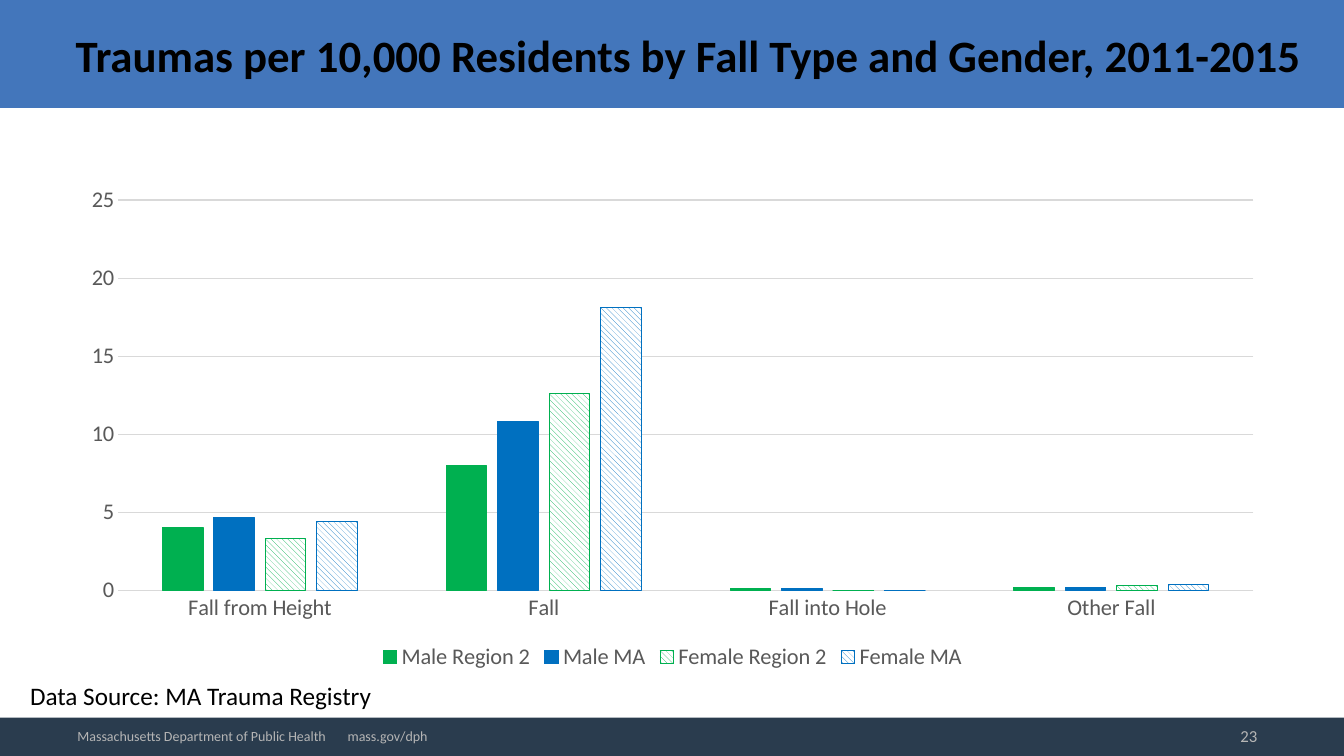
import pptx
import pptx.chart.data
import pptx.dml.color
import pptx.enum.chart
import pptx.enum.dml
import pptx.enum.shapes
import pptx.enum.text
import pptx.util

Inches = pptx.util.Inches
Points = pptx.util.Pt
Anchor = pptx.enum.text.MSO_ANCHOR
Align = pptx.enum.text.PP_ALIGN

COLORS = {
    "banner": "4376BB", "footer": "2A3C4E", "text": "000000",
    "footer_text": "B5B5B5", "axis_text": "595959", "grid": "D9D9D9",
    "region": "00B050", "state": "0070C0", "white": "FFFFFF",
}
CATEGORIES = ["Fall from Height", "Fall", "Fall into Hole", "Other Fall"]
SERIES = [
    ("Male Region 2", (4, 8, 0.1, 0.2), "region", False),
    ("Male MA", (4.7, 10.8, 0.1, 0.2), "state", False),
    ("Female Region 2", (3.3, 12.6, 0, 0.3), "region", True),
    ("Female MA", (4.4, 18.1, 0, 0.4), "state", True),
]


class SlideBuilder:
    """Holds the style and the current page, and adds each kind of element."""

    def __init__(self, page, font="Calibri"):
        self.page = page
        self.font = font

    def color(self, name):
        return pptx.dml.color.RGBColor.from_string(COLORS[name])

    def style_font(self, font, size, color, bold=False):
        font.name = self.font
        font.size = Points(size)
        font.bold = bold
        font.color.rgb = self.color(color)

    def style_line(self, line, color):
        line.color.rgb = self.color(color)
        line.width = Points(0.75)

    def band(self, top, height, color):
        box = self.page.shapes.add_shape(
            pptx.enum.shapes.MSO_SHAPE.RECTANGLE,
            0, Inches(top), Inches(13.33), Inches(height))
        box.shadow.inherit = False
        box.fill.solid()
        box.fill.fore_color.rgb = self.color(color)
        box.line.fill.background()

    def fill_text(self, box, text, size, color, anchor, align=Align.LEFT, bold=False):
        frame = box.text_frame
        frame.text = text
        frame.word_wrap = True
        frame.auto_size = pptx.enum.text.MSO_AUTO_SIZE.NONE
        frame.vertical_anchor = anchor
        for para in frame.paragraphs:
            para.alignment = align
            for span in para.runs:
                self.style_font(span.font, size, color, bold)

    def title(self, text, left, top, width, height):
        box = self.page.shapes.title
        box.left, box.top = Inches(left), Inches(top)
        box.width, box.height = Inches(width), Inches(height)
        self.page.shapes._spTree.append(box._element)
        self.fill_text(box, text, 32, "text", Anchor.MIDDLE, bold=True)

    def text(self, text, left, top, width, height, size, color,
             anchor=Anchor.MIDDLE, align=Align.LEFT):
        box = self.page.shapes.add_textbox(
            Inches(left), Inches(top), Inches(width), Inches(height))
        self.fill_text(box, text, size, color, anchor, align)

    def column_chart(self, categories, series_rows, left, top, width, height):
        data = pptx.chart.data.CategoryChartData()
        data.categories = categories
        for name, values, _, _ in series_rows:
            data.add_series(name, values)
        chart = self.page.shapes.add_chart(
            pptx.enum.chart.XL_CHART_TYPE.COLUMN_CLUSTERED,
            Inches(left), Inches(top), Inches(width), Inches(height), data).chart
        self.style_font(chart.font, 10, "text")
        chart.has_title = False
        chart.has_legend = True
        chart.legend.position = pptx.enum.chart.XL_LEGEND_POSITION.BOTTOM
        chart.legend.include_in_layout = False
        self.style_font(chart.legend.font, 16, "axis_text")
        for axis in (chart.category_axis, chart.value_axis):
            axis.major_tick_mark = pptx.enum.chart.XL_TICK_MARK.NONE
            axis.minor_tick_mark = pptx.enum.chart.XL_TICK_MARK.NONE
            self.style_font(axis.tick_labels.font, 16, "axis_text")
        self.style_line(chart.category_axis.format.line, "grid")
        values_axis = chart.value_axis
        values_axis.minimum_scale, values_axis.maximum_scale = 0, 25
        values_axis.major_unit = 5
        values_axis.format.line.fill.background()
        self.style_line(values_axis.major_gridlines.format.line, "grid")
        plot = chart.plots[0]
        plot.gap_width, plot.overlap = 219, -27
        plot.vary_by_categories = False
        for series, (_, _, color, hatched) in zip(plot.series, series_rows):
            series.invert_if_negative = False
            self.style_line(series.format.line, color)
            fill = series.format.fill
            if hatched:
                fill.patterned()
                fill.pattern = pptx.enum.dml.MSO_PATTERN.WIDE_DOWNWARD_DIAGONAL
                fill.back_color.rgb = self.color("white")
            else:
                fill.solid()
            fill.fore_color.rgb = self.color(color)


def main():
    deck = pptx.Presentation()
    deck.slide_width, deck.slide_height = Inches(13.33), Inches(7.5)
    builder = SlideBuilder(deck.slides.add_slide(deck.slide_layouts[5]))
    builder.band(0, 1.07, "banner")
    builder.band(7.12, 0.38, "footer")
    builder.title("Traumas per 10,000 Residents by Fall Type and Gender, 2011-2015",
                  0.65, 0.06, 12.46, 0.96)
    builder.column_chart(CATEGORIES, SERIES, 0.67, 1.75, 12, 4.95)
    builder.text("Data Source: MA Trauma Registry", 0.2, 6.7, 3.83, 0.4,
                 18, "text", anchor=Anchor.TOP)
    builder.text("23", 9.58, 7.1, 2.99, 0.4, 12, "footer_text", align=Align.RIGHT)
    builder.text("Massachusetts Department of Public Health",
                 0.67, 7.12, 2.68, 0.37, 10, "footer_text")
    builder.text("mass.gov/dph", 3.35, 7.12, 1.49, 0.37, 10, "footer_text")
    deck.save("out.pptx")


if __name__ == "__main__":
    main()
